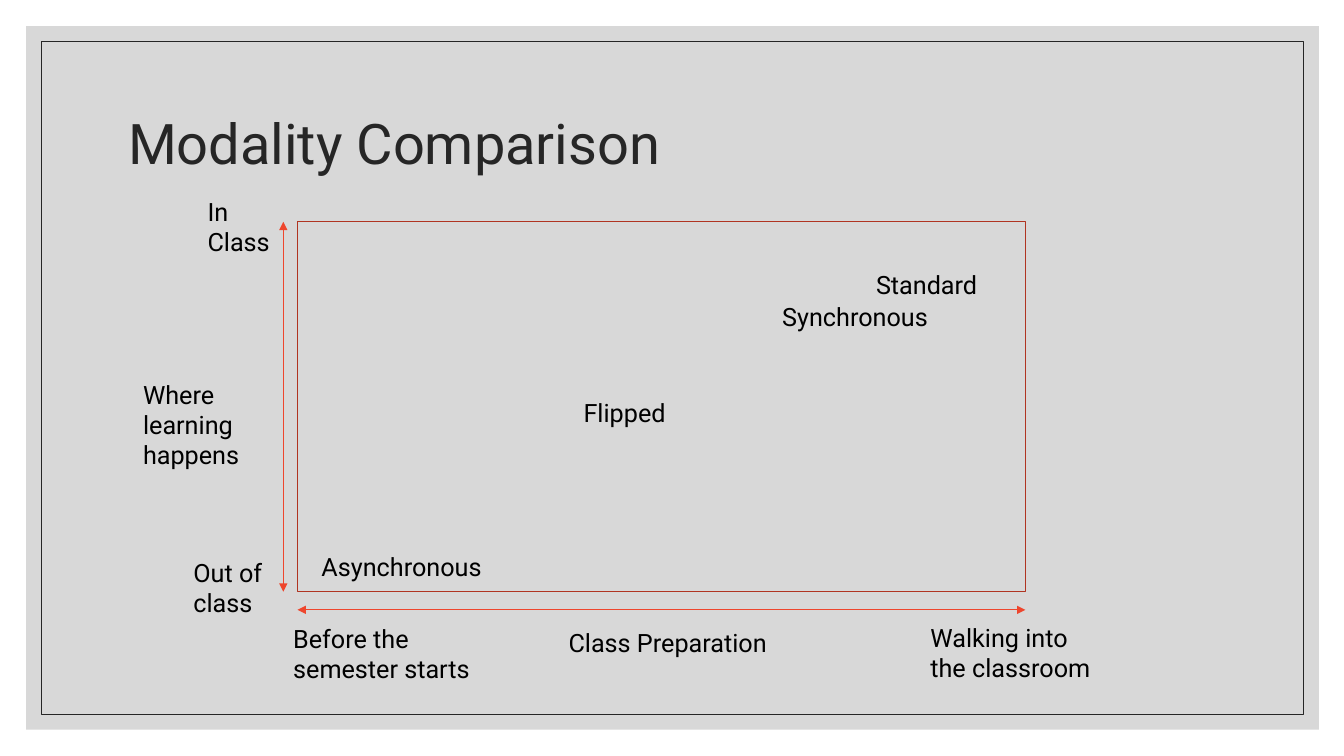
from pptx import Presentation
from pptx.dml.color import RGBColor
from pptx.enum.shapes import MSO_CONNECTOR as Link, MSO_SHAPE as Shape
from pptx.enum.text import MSO_ANCHOR as Anchor, MSO_AUTO_SIZE as Fit, PP_ALIGN as Align
from pptx.oxml.ns import qn
from pptx.util import Emu, Pt
from lxml.etree import SubElement

FONT = "Roboto"
BLACK, DARK, GRAY = "000000", "262626", "BFBFBF"
RUST, RED = "B03421", "EE462D"

# Labels as (text, left, top, width, height), measured from the plot's corner
PLOT = [
    ("Standard", 564, 42, 152, 40),
    ("Synchronous", 471, 74, 171, 40),
    ("Flipped", 274, 169, 194, 40),
    ("Asynchronous", 14, 322, 206, 40),
]
SIDE = [
    ("In Class", -99, -30, 99, 71),
    ("Where learning happens", -163, 151, 149, 101),
    ("Out of class", -113, 328, 106, 71),
]
BASE = [
    ("Before the semester starts", -14, 393, 203, 71),
    ("Class Preparation", 259, 397, 225, 40),
    ("Walking into the classroom", 618, 392, 180, 71),
]


def px(n):
    """100 px to the inch."""
    return Emu(n * 9144)


def color(code):
    return RGBColor.from_string(code)


def style(para, size, code):
    para.alignment = Align.LEFT
    for run in para.runs:
        run.font.name = FONT
        run.font.size = Pt(size)
        run.font.color.rgb = color(code)


def rect(slide, box, line=None, width=1):
    shape = slide.shapes.add_shape(Shape.RECTANGLE, *map(px, box))
    shape.shadow.inherit = False
    shape.fill.background()
    if line:
        shape.line.color.rgb = color(line)
        shape.line.width = Pt(width)
    else:
        shape.line.fill.background()
    return shape


def label(slide, x, y, item):
    text, left, top, wide, high = item
    box = slide.shapes.add_textbox(px(x + left), px(y + top), px(wide), px(high))
    frame = box.text_frame
    frame.word_wrap = True
    frame.auto_size = Fit.SHAPE_TO_FIT_TEXT
    frame.text = text
    style(frame.paragraphs[0], 18, BLACK)


def arrow(slide, *ends):
    line = slide.shapes.add_connector(Link.STRAIGHT, *map(px, ends))
    line.line.color.rgb = color(RED)
    line.line.width = Pt(0.5)
    for tag in ("a:headEnd", "a:tailEnd"):
        SubElement(line.line._get_or_add_ln(), qn(tag), type="triangle")
    SubElement(line._element.spPr, qn("a:effectLst"))


def frame(slide, box):
    """Translucent panel with a thin inner border."""
    x, y, w, h = box
    panel = rect(slide, box)
    panel.fill.solid()
    panel.fill.fore_color.rgb = color(GRAY)
    tint = panel._element.spPr.find(".//" + qn("a:srgbClr"))
    SubElement(tint, qn("a:alpha"), val="60000")
    gap = 15
    rect(slide, (x + gap, y + gap, w - 2 * gap, h - 2 * gap), DARK, 0.5)


def heading(slide, box):
    title = slide.shapes.title
    title.left, title.top, title.width, title.height = map(px, box)
    body = title.text_frame
    body.text = "Modality Comparison"
    body.vertical_anchor = Anchor.MIDDLE
    para = body.paragraphs[0]
    para.line_spacing = 0.9
    style(para, 40, DARK)


def chart(slide, box):
    """Plot area with an arrow along each axis and its labels."""
    x, y, w, h = box
    rect(slide, box, RUST)
    arrow(slide, x - 14, y, x - 14, y + h)
    arrow(slide, x, y + h + 18, x + w, y + h + 18)
    for item in SIDE + BASE + PLOT:
        label(slide, x, y, item)


def main():
    deck = Presentation()
    deck.slide_width, deck.slide_height = px(1333), px(750)
    slide = deck.slides.add_slide(deck.slide_layouts[5])
    frame(slide, (26, 26, 1282, 698))
    heading(slide, (117, 70, 1100, 150))
    chart(slide, (295, 220, 722, 367))
    # The title lies above the panel
    tree = slide.shapes._spTree
    tree.remove(title := slide.shapes.title._element)
    tree.insert(4, title)
    deck.save("out.pptx")


if __name__ == "__main__":
    main()
